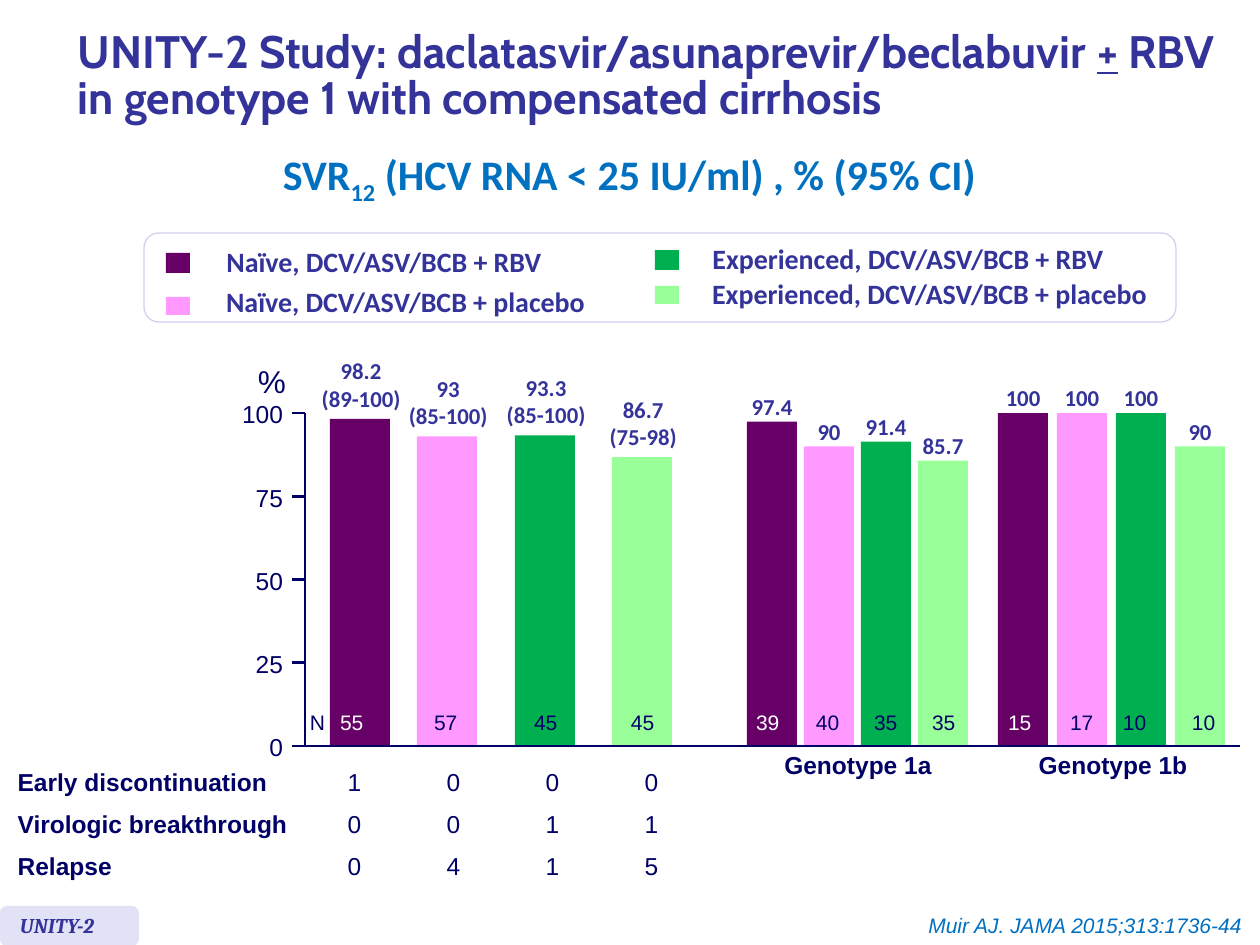
from pptx import Presentation
from pptx.dml.color import RGBColor
from pptx.enum.shapes import MSO_CONNECTOR, MSO_SHAPE
from pptx.enum.text import MSO_ANCHOR, MSO_AUTO_SIZE, PP_ALIGN
from pptx.oxml.ns import qn
from pptx.util import Emu, Pt
from lxml import etree

EMU_PER_PX = 914400 / 126
LEFT, CENTER, RIGHT = PP_ALIGN.LEFT, PP_ALIGN.CENTER, PP_ALIGN.RIGHT
TOP, MIDDLE = MSO_ANCHOR.TOP, MSO_ANCHOR.MIDDLE
RECT, ROUNDED = MSO_SHAPE.RECTANGLE, MSO_SHAPE.ROUNDED_RECTANGLE
STRAIGHT = MSO_CONNECTOR.STRAIGHT
FIXED, GROW = MSO_AUTO_SIZE.NONE, MSO_AUTO_SIZE.SHAPE_TO_FIT_TEXT

NAVY, INDIGO, BLUE, WHITE = "000066", "333399", "0070C0", "FFFFFF"
PURPLE, PINK, GREEN, LIGHT_GREEN = "660066", "FF99FF", "00B050", "99FF99"
ARM_COLORS = (PURPLE, PINK, GREEN, LIGHT_GREEN)
COUNT_COLORS = (WHITE, NAVY, NAVY, NAVY)

TITLE = dict(name="Cabin", size=Pt(26), bold=True, color=INDIGO)
SUBTITLE = dict(name="Calibri", size=Pt(24), bold=True, color=BLUE)
LEGEND = dict(name="Calibri", size=Pt(16), bold=True, color=INDIGO)
VALUE = dict(name="Calibri", size=Pt(13), bold=True, color=INDIGO)
AXIS = dict(name="Arial", size=Pt(14), color=NAVY)
GROUP = dict(AXIS, bold=True)
COUNT = dict(name="Arial", size=Pt(12), color=NAVY)
TAG = dict(name="Cambria", size=Pt(12), bold=True, italic=True, color=INDIGO)
CITATION = dict(name="Arial", size=Pt(12), italic=True, color=BLUE)

# Each bar: value, label lines, patients, shift of the patient count in px
OVERALL = [(98.2, ["98.2", "(89-100)"], 55, -3), (93, ["93", "(85-100)"], 57, 4),
           (93.3, ["93.3", "(85-100)"], 45, 6), (86.7, ["86.7", "(75-98)"], 45, 6)]
GENOTYPE_1A = [(97.4, ["97.4"], 39, -4), (90, ["90"], 40, -1),
               (91.4, ["91.4"], 35, 0), (85.7, ["85.7"], 35, 1)]
GENOTYPE_1B = [(100, ["100"], 15, -3), (100, ["100"], 17, 0),
               (100, ["100"], 10, -6), (90, ["90"], 10, 4)]
FAILURES = [("Early discontinuation", 1, 0, 0, 0),
            ("Virologic breakthrough", 0, 0, 1, 1),
            ("Relapse", 0, 4, 1, 5)]


def px(*lengths):
    return [Emu(round(length * EMU_PER_PX)) for length in lengths]


def rgb(hex_color):
    return RGBColor.from_string(hex_color)


def style(font, formats):
    for key, value in formats.items():
        if key == "color":
            font.color.rgb = rgb(value)
        else:
            setattr(font, key, value)


def write(frame, lines, formats, align=LEFT, anchor=TOP, wrap=False,
          margins=(13, 6, 13, 6), spacing=None):
    """Each line is a list of (text, extra formats) runs or a plain string."""
    frame.word_wrap = wrap
    frame.auto_size = FIXED if wrap else GROW
    frame.vertical_anchor = anchor
    (frame.margin_left, frame.margin_top,
     frame.margin_right, frame.margin_bottom) = px(*margins)
    for index, line in enumerate(lines):
        paragraph = frame.add_paragraph() if index else frame.paragraphs[0]
        paragraph.alignment = align
        paragraph.line_spacing = spacing
        for text, extra in ([(line, {})] if isinstance(line, str) else line):
            run = paragraph.add_run()
            run.text = text
            style(run.font, formats | extra)
    return frame


def add_text(slide, box, lines, formats, *layout, **options):
    frame = slide.shapes.add_textbox(*px(*box)).text_frame
    return write(frame, lines, formats, *layout, **options)


def add_block(slide, box, fill=None, kind=RECT, line=None):
    block = slide.shapes.add_shape(kind, *px(*box))
    block.shadow.inherit = False
    if fill:
        block.fill.solid()
        block.fill.fore_color.rgb = rgb(fill)
    else:
        block.fill.background()
    if line:
        block.line.color.rgb = rgb(line)
        block.line.width = Pt(0.75)
    else:
        block.line.fill.background()
    return block


def add_line(slide, x1, y1, x2, y2):
    line = slide.shapes.add_connector(STRAIGHT, *px(x1, y1, x2, y2))
    line.line.color.rgb = rgb(NAVY)
    line.line.width = Pt(1.5)
    etree.SubElement(line._element.spPr, qn("a:effectLst"))


def add_headings(slide, box):
    left, top, width, height = box
    add_text(slide, (left, top, width, 135),
             [[("UNITY-2 Study: daclatasvir/asunaprevir/beclabuvir ", {}),
               ("+", {"underline": True}),
               (" RBV in genotype 1 with compensated cirrhosis", {})]],
             TITLE, anchor=MIDDLE, wrap=True, spacing=0.85)
    subtitle = add_text(slide, (left + 200, top + 149, 729, height - 149),
                        [[("SVR", {}), ("12", {}),
                          (" (HCV RNA < 25 IU/ml) , % (95% CI)", {})]],
                        SUBTITLE, CENTER, spacing=Pt(23.6))
    subscript = subtitle.paragraphs[0].runs[1]
    subscript._r.get_or_add_rPr().set("baseline", "-25000")


def add_legend(slide, box):
    left, top, width, height = box
    add_block(slide, box, WHITE, ROUNDED, "D0D0F0")
    # Swatch left, top and height; label left, top, width and height
    entries = [
        ("Naïve, DCV/ASV/BCB + RBV", (22, 20, 20), (49, 3, 430, 50)),
        ("Naïve, DCV/ASV/BCB + placebo", (22, 64, 18), (49, 46, 430, 44)),
        ("Experienced, DCV/ASV/BCB + RBV", (511, 17, 20), (535, 0, 500, 50)),
        ("Experienced, DCV/ASV/BCB + placebo", (511, 53, 18), (535, 38, 500, 44))]
    for color, (name, swatch, label) in zip(ARM_COLORS, entries):
        x, y, swatch_height = swatch
        add_block(slide, (left + x, top + y, 24, swatch_height), color)
        x, y, *size = label
        holder = add_block(slide, (left + x, top + y, *size), kind=ROUNDED)
        write(holder.text_frame, [name], LEGEND, anchor=MIDDLE, wrap=True,
              margins=(31, 6, 6, 6))


def add_axes(slide, box):
    left, top, width, height = box
    bottom = top + height
    for tick in range(0, 101, 25):
        y = bottom - height * tick / 100
        add_line(slide, left - 13, y, left if tick else left + width, y)
        add_text(slide, (left - 64, y - 14, 42, 30), [str(tick)], AXIS, RIGHT,
                 MIDDLE, wrap=True, margins=(0, 0, 0, 0))
    add_line(slide, left, top, left, bottom)
    add_text(slide, (left - 60, top - 57, 53, 44), ["%"], dict(AXIS, size=Pt(18)))
    add_text(slide, (left - 8, bottom - 42, 42, 38), ["N"], COUNT)


def add_bars(slide, box, bars, offsets, bar_width, name=None):
    left, top, width, height = box
    bottom = top + height
    for (value, label, patients, shift), offset, color, count_color in zip(
            bars, offsets, ARM_COLORS, COUNT_COLORS):
        x = left + offset
        bar_height = height * value / 100
        bar_top = bottom - bar_height
        add_block(slide, (x, bar_top, bar_width, bar_height), color)
        # Intervals need a wider and taller label
        label_width, label_height, rise = (
            (120, 81, 75) if len(label) > 1 else (72, 53, 42))
        add_text(slide, (x + (bar_width - label_width) / 2 + len(label) - 1,
                         bar_top - rise, label_width, label_height),
                 label, VALUE, CENTER, margins=(13, 13, 13, 13))
        add_text(slide, (x + shift, bottom - 42, 56, 38), [str(patients)],
                 dict(COUNT, color=count_color))
    if name:
        add_text(slide, (left, bottom - 2, width, 43), [name], GROUP, CENTER)


def add_failures(slide, box):
    left, top, width, height = box
    table = slide.shapes.add_table(len(FAILURES), 5, *px(*box)).table
    table.first_row = table.horz_banding = False
    for index, column in enumerate(table.columns):
        column.width = px(99 if index else width - 4 * 99)[0]
    for row, values in enumerate(FAILURES):
        for column, value in enumerate(values):
            cell = table.cell(row, column)
            cell.fill.background()
            cell.text = str(value)
            paragraph = cell.text_frame.paragraphs[0]
            paragraph.alignment = CENTER if column else LEFT
            style(paragraph.runs[0].font, dict(AXIS, bold=column == 0))


def add_footer(slide, box):
    left, top, width, height = box
    add_block(slide, (left, top, 139, height), "E2E2F6", ROUNDED)
    add_text(slide, (left + 7, top + 1, 170, 38), ["UNITY-2"], TAG, wrap=True)
    add_text(slide, (left + 692, top + 1, width - 697, 38),
             ["Muir AJ. JAMA 2015;313:1736-44"], CITATION, RIGHT, wrap=True)


def main():
    deck = Presentation()
    deck.slide_width, deck.slide_height = px(1260, 945)
    slide = deck.slides.add_slide(deck.slide_layouts[6])
    add_headings(slide, (65, 10, 1195, 204))
    add_legend(slide, (144, 233, 1032, 89))
    # Bars first, so that the axis lies over their feet
    add_bars(slide, (330, 413, 342, 333), OVERALL, (0, 87, 185, 282), 60)
    add_bars(slide, (747, 413, 222, 333), GENOTYPE_1A, range(0, 172, 57), 50,
             "Genotype 1a")
    add_bars(slide, (998, 413, 230, 333), GENOTYPE_1B, range(0, 178, 59), 50,
             "Genotype 1b")
    add_axes(slide, (305, 413, 935, 333))
    add_failures(slide, (5, 763, 696, 126))
    add_footer(slide, (0, 906, 1260, 40))
    deck.save("out.pptx")


if __name__ == "__main__":
    main()
